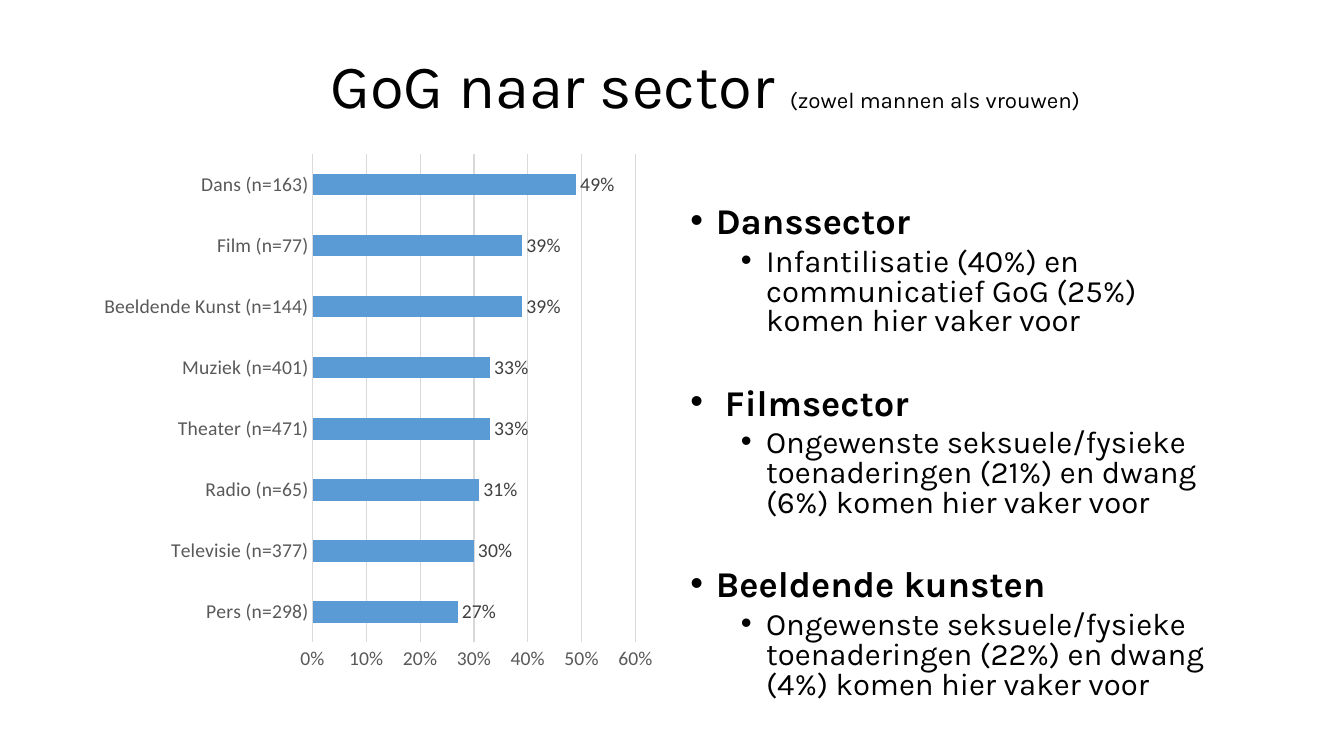
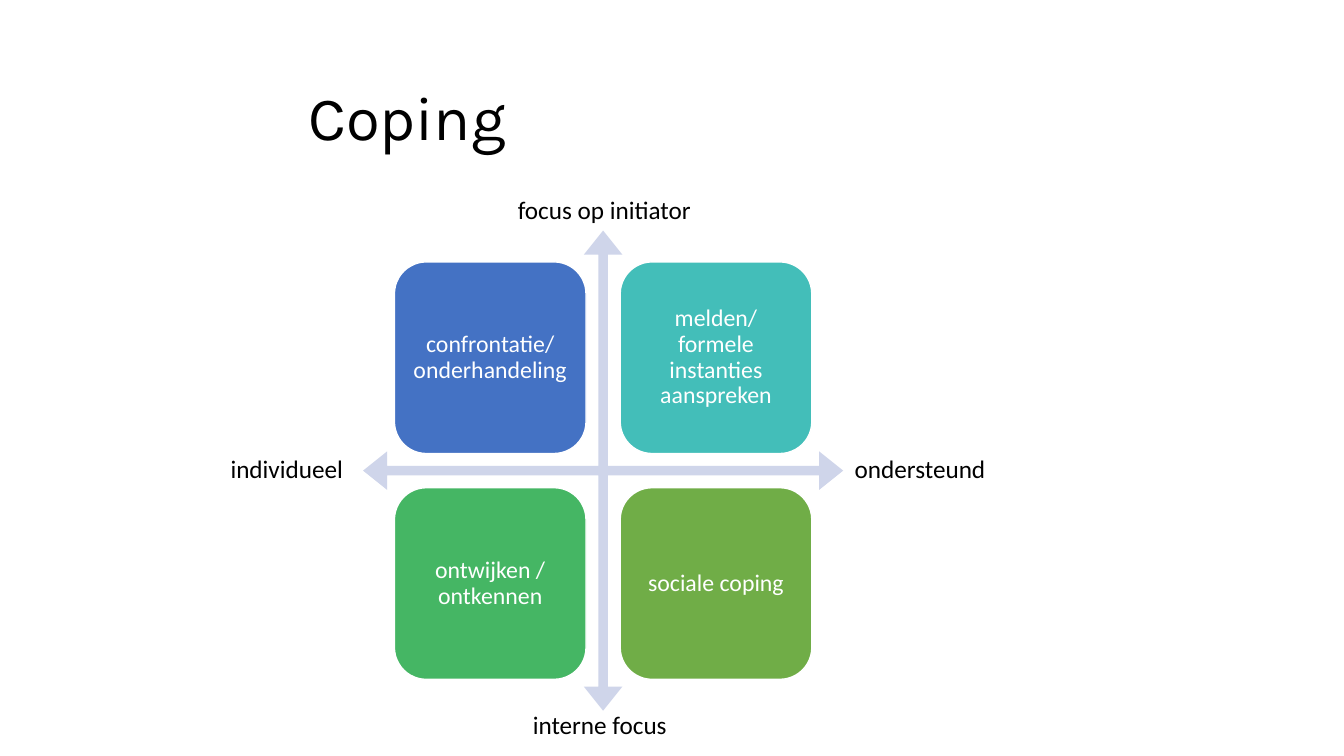
"""Build two slides: a sector bar chart with findings, and a coping quadrant."""
from lxml.etree import SubElement
from pptx import Presentation
from pptx.chart.data import CategoryChartData
from pptx.dml.color import RGBColor
from pptx.enum.chart import XL_CHART_TYPE, XL_LABEL_POSITION, XL_TICK_MARK
from pptx.enum.shapes import MSO_SHAPE
from pptx.enum.text import MSO_ANCHOR, PP_ALIGN
from pptx.oxml.ns import qn
from pptx.util import Cm, Pt

COLOURS = {
    "text": "000000", "white": "FFFFFF", "bar": "5B9BD5", "axis": "595959",
    "grid": "D9D9D9", "value": "404040", "arrows": "CFD5EA",
    "blue": "4472C4", "teal": "43BEB9", "mint": "45B664", "green": "70AD47",
}
HEADING_FONT, BODY_FONT = "Karla", "Calibri"

SECTORS = [
    ("Pers (n=298)", 0.27), ("Televisie (n=377)", 0.30),
    ("Radio (n=65)", 0.31), ("Theater (n=471)", 0.33),
    ("Muziek (n=401)", 0.33), ("Beeldende Kunst (n=144)", 0.39),
    ("Film (n=77)", 0.39), ("Dans (n=163)", 0.49),
]
FINDINGS = [
    ("Danssector",
     "Infantilisatie (40%) en communicatief GoG (25%) komen hier vaker voor"),
    (" Filmsector",
     "Ongewenste seksuele/fysieke toenaderingen (21%) en dwang (6%) komen hier vaker voor"),
    ("Beeldende kunsten",
     "Ongewenste seksuele/fysieke toenaderingen (22%) en dwang (4%) komen hier vaker voor"),
]
STRATEGIES = [
    [("confrontatie/ onderhandeling", "blue"),
     ("melden/ formele instanties aanspreken", "teal")],
    [("ontwijken / ontkennen", "mint"), ("sociale coping", "green")],
]
AXIS_LABELS = [
    ("focus op initiator", 12.65, 4.78, 5.16, PP_ALIGN.CENTER),
    ("interne focus", 12.65, 17.75, 4.93, PP_ALIGN.CENTER),
    ("ondersteund", 21.29, 11.3, 3.91, PP_ALIGN.LEFT),
    ("individueel", 5.56, 11.3, 3.91, PP_ALIGN.LEFT),
]


def colour(name):
    return RGBColor.from_string(COLOURS[name])


def style_font(font, size, name=BODY_FONT, tint="text", bold=False):
    font.size, font.name, font.bold = Pt(size), name, bold
    font.color.rgb = colour(tint)


def add_text_box(page, left, top, width, height):
    box = page.shapes.add_textbox(Cm(left), Cm(top), Cm(width), Cm(height))
    box.text_frame.word_wrap = True
    return box.text_frame


def add_title(page, left, top, *parts):
    frame = add_text_box(page, left, top, 25, 3.68)
    frame.vertical_anchor = MSO_ANCHOR.MIDDLE
    para = frame.paragraphs[0]
    para.line_spacing = 0.9
    for text, size in parts:
        span = para.add_run()
        span.text = text
        style_font(span.font, size, HEADING_FONT)


def add_bullet(para, text, indent, size, before, bold):
    para.text = text
    properties = para._p.get_or_add_pPr()
    properties.set("marL", str(Cm(indent)))
    properties.set("indent", str(-Cm(0.64)))
    SubElement(properties, qn("a:buFont"), typeface="Arial")
    SubElement(properties, qn("a:buChar"), char="•")
    para.line_spacing, para.space_before = 0.8, Pt(before)
    style_font(para.runs[0].font, size, HEADING_FONT, bold=bold)


def add_findings(page):
    frame = add_text_box(page, 17.15, 5.08, 14.4, 12.09)
    for index, (sector, finding) in enumerate(FINDINGS):
        para = frame.add_paragraph() if index else frame.paragraphs[0]
        add_bullet(para, sector, 0.64, 25.9, 36 if index else 0, True)
        add_bullet(frame.add_paragraph(), finding, 1.91, 22.2, 5, False)


def add_sector_chart(page):
    data = CategoryChartData(number_format="0%")
    data.categories = [sector for sector, share in SECTORS]
    data.add_series("Series 1", [share for sector, share in SECTORS])
    chart = page.shapes.add_chart(
        XL_CHART_TYPE.BAR_CLUSTERED, Cm(2.34), Cm(3.61), Cm(14.4), Cm(13.56), data
    ).chart
    chart.has_legend = chart.has_title = False
    style_font(chart.font, 14)

    for axis in (chart.category_axis, chart.value_axis):
        axis.major_tick_mark = axis.minor_tick_mark = XL_TICK_MARK.NONE
        style_font(axis.tick_labels.font, 14, tint="axis")
    shares = chart.value_axis
    shares.minimum_scale, shares.maximum_scale, shares.major_unit = 0, 0.6, 0.1
    shares.tick_labels.number_format = "0%"
    shares.tick_labels.number_format_is_linked = False
    shares.format.line.fill.background()
    for line in (chart.category_axis.format.line, shares.major_gridlines.format.line):
        line.color.rgb, line.width = colour("grid"), Pt(0.75)

    plot = chart.plots[0]
    plot.gap_width, plot.vary_by_categories = 182, False
    bars = plot.series[0].format.fill
    bars.solid()
    bars.fore_color.rgb = colour("bar")
    plot.has_data_labels = True
    labels = plot.data_labels
    labels.show_value, labels.position = True, XL_LABEL_POSITION.OUTSIDE_END
    labels.number_format, labels.number_format_is_linked = "0%", False
    style_font(labels.font, 14, tint="value")


def add_filled_shape(page, kind, left, top, size, tint):
    shape = page.shapes.add_shape(kind, Cm(left), Cm(top), Cm(size), Cm(size))
    shape.shadow.inherit = False
    shape.fill.solid()
    shape.fill.fore_color.rgb = colour(tint)
    shape.line.fill.background()
    return shape


def add_strategy(page, left, top, size, text, tint):
    tile = add_filled_shape(page, MSO_SHAPE.ROUNDED_RECTANGLE, left, top, size, tint)
    tile.line.color.rgb, tile.line.width = colour("white"), Pt(1)
    frame = tile.text_frame
    frame.word_wrap, frame.vertical_anchor = True, MSO_ANCHOR.MIDDLE
    frame.margin_left = frame.margin_right = Cm(0.18)
    frame.margin_top = frame.margin_bottom = Cm(0.18)
    frame.text = text
    para = frame.paragraphs[0]
    para.alignment, para.line_spacing = PP_ALIGN.CENTER, 0.9
    style_font(para.runs[0].font, 17, tint="white")


def add_quadrant(page):
    centre_x, centre_y, span, tile, gap = 15.2, 11.86, 12.1, 4.83, 0.86
    arrows = add_filled_shape(page, MSO_SHAPE.QUAD_ARROW, centre_x - span / 2,
                              centre_y - span / 2, span, "arrows")
    for index, share in enumerate((0.02, 0.04, 0.05)):
        arrows.adjustments[index] = share
    offset = tile + gap / 2
    for row, strategies in enumerate(STRATEGIES):
        for column, (text, tint) in enumerate(strategies):
            add_strategy(page, centre_x - offset + column * (tile + gap),
                         centre_y - offset + row * (tile + gap), tile, text, tint)
    for text, left, top, width, alignment in AXIS_LABELS:
        frame = add_text_box(page, left, top, width, 1.03)
        frame.text = text
        frame.paragraphs[0].alignment = alignment
        style_font(frame.paragraphs[0].runs[0].font, 18)


def main():
    deck = Presentation()
    deck.slide_width, deck.slide_height = Cm(33.87), Cm(19.05)
    blank = deck.slide_layouts[6]

    page = deck.slides.add_slide(blank)
    add_title(page, 8.08, 0.38, ("GoG naar sector ", 44), ("(zowel mannen als vrouwen)", 16))
    add_findings(page)
    add_sector_chart(page)

    page = deck.slides.add_slide(blank)
    add_title(page, 7.52, 1.19, ("Coping", 44))
    add_quadrant(page)

    deck.save("out.pptx")


if __name__ == "__main__":
    main()
